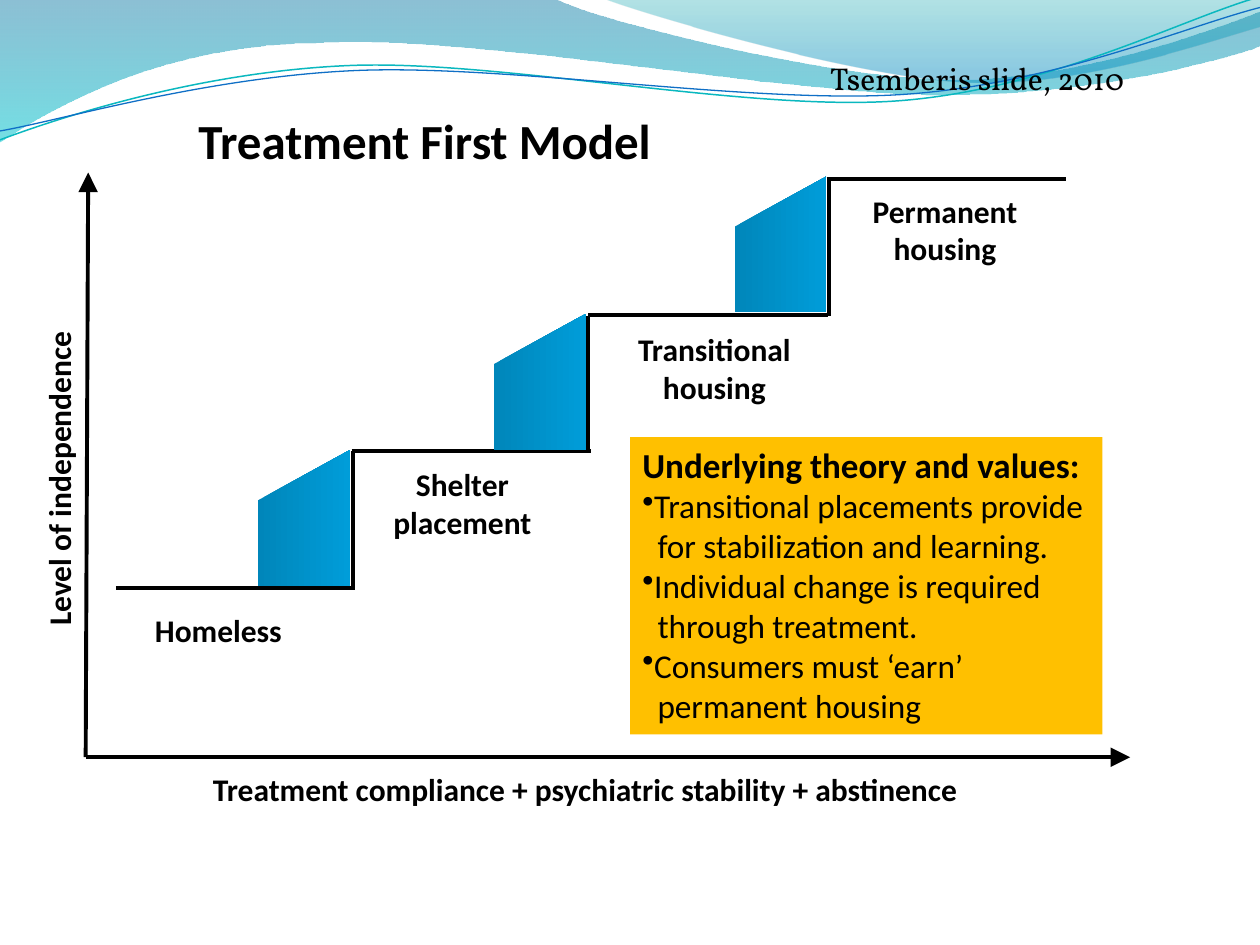
import math

import lxml.etree
import pptx
import pptx.dml.color
import pptx.enum.shapes
import pptx.enum.text
import pptx.oxml.ns
import pptx.util

Inches, Pt = pptx.util.Inches, pptx.util.Pt
RGBColor = pptx.dml.color.RGBColor
ALIGN = pptx.enum.text.PP_ALIGN
ANCHOR = pptx.enum.text.MSO_ANCHOR
GROW = pptx.enum.text.MSO_AUTO_SIZE.SHAPE_TO_FIT_TEXT
qn = pptx.oxml.ns.qn

BLACK = RGBColor(0x00, 0x00, 0x00)
AMBER = RGBColor(0xFF, 0xC0, 0x00)
STEP_DARK = RGBColor(0x00, 0x86, 0xBA)
STEP_LIGHT = RGBColor(0x00, 0x9D, 0xD9)
WAVE_BLUE = RGBColor(0x00, 0x74, 0xA1)
WAVE_CYAN = RGBColor(0x00, 0xC6, 0xCF)
CREST_TEAL = RGBColor(0x00, 0xA1, 0xA9)
CREST_BLUE = RGBColor(0x00, 0x8B, 0xBF)
TEAL_LINE = RGBColor(0x0A, 0xB8, 0xBF)
BLUE_LINE = RGBColor(0x0F, 0x6F, 0xC6)
FONT = "Calibri"

# Content
TITLE = "Treatment First Model"
CREDIT = "Tsemberis slide, 2010"
INDEPENDENCE_AXIS = "Level of independence"
COMPLIANCE_AXIS = "Treatment compliance + psychiatric stability + abstinence"
STEP_LABELS = [  # text, left, top, width, height, alignment
    ("Homeless", 1.23, 4.85, 1.27, 0.3, ALIGN.LEFT),
    ("Shelter placement", 2.83, 3.69, 1.68, 0.61, ALIGN.CENTER),
    ("Transitional housing", 4.83, 2.62, 1.68, 0.61, ALIGN.CENTER),
    ("Permanent housing", 6.66, 1.52, 1.68, 0.61, ALIGN.CENTER),
]
THEORY_HEADING = "Underlying theory and values:"
THEORY_POINTS = [  # bulleted line, continuation line
    ("Transitional placements provide", "for stabilization and learning."),
    ("Individual change is required", "through treatment."),
    ("Consumers must ‘earn’", "permanent housing"),
]

# Staircase corners
TREADS = [(0.92, 4.67), (2.79, 3.58), (4.67, 2.5), (6.56, 1.42)]  # left, top
RISERS = [(2.8, 3.58), (4.67, 2.51), (6.58, 1.43)]  # x, top
PANELS = [(2.05, 3.57), (3.92, 2.49), (5.83, 1.4)]  # left, top
TREAD, RISE = 1.9, 1.08
PANEL_WIDTH, PANEL_SLOPE = 0.73, 0.4

# Wave outlines: a start point, then lines (2 numbers) or cubic curves (6 numbers)
WAVE_FILLS = [  # outline, gradient stops (position, colour, opacity %)
    ([(0, -0.01), (4.4, -0.01), (4.76, 0.17, 6.64, 0.63, 7.58, 0.63),
      (8.53, 0.63, 9.58, 0.26, 10, 0.09), (10.01, 0.36),
      (9.83, 0.44, 8.7, 0.76, 7.46, 0.75), (6.22, 0.75, 3.82, 0.28, 2.57, 0.34),
      (1.29, 0.35, 0.46, 0.83, -0.01, 1.13), (0, -0.01)],
     [(0, WAVE_BLUE, 45), (1, WAVE_CYAN, 55)]),
    ([(4.79, -0.01), (5.09, 0.11, 6.82, 0.62, 7.69, 0.65),
      (8.56, 0.69, 9.61, 0.32, 10, 0.21), (10, 0), (4.79, -0.01)],
     [(0, CREST_TEAL, 30), (0.8, CREST_BLUE, 45)]),
]
WAVE_TILT = -2.7
WAVE_LINES = [  # outline, centre, colour, width
    ([(0, 1.11), (0.48, 0.93, 1.58, 0.57, 2.77, 0.52),
      (3.95, 0.47, 5.93, 0.89, 7.13, 0.8), (8.33, 0.71, 9.38, 0.15, 9.98, -0.02)],
     (4.99, 0.58), TEAL_LINE, 0.85),
    ([(0, 1.04), (0.47, 0.96, 1.64, 0.61, 2.83, 0.56),
      (4.03, 0.51, 5.97, 0.83, 7.17, 0.75), (8.36, 0.67, 9.41, 0.21, 10, 0.06)],
     (5, 0.59), BLUE_LINE, 0.75),
]


def untilt(outline, center):
    """Turn an outline back to level about its centre."""
    cx, cy = center
    cos, sin = math.cos(math.radians(-WAVE_TILT)), math.sin(math.radians(-WAVE_TILT))
    level = []
    for segment in outline:
        turned = []
        for x, y in zip(segment[::2], segment[1::2]):
            turned += [cx + (x - cx) * cos - (y - cy) * sin,
                       cy + (x - cx) * sin + (y - cy) * cos]
        level.append(tuple(turned))
    return level


def add_outline(slide, outline, close=False):
    points = [(Inches(x), Inches(y)) for segment in outline
              for x, y in zip(segment[::2], segment[1::2])]
    builder = slide.shapes.build_freeform(*points[0], scale=1.0)
    builder.add_line_segments(points[1:], close=close)
    shape = builder.convert_to_shape()
    shape.shadow.inherit = False
    # Join each group of three points into one cubic curve
    steps = iter(list(shape.element.spPr.iter(qn("a:lnTo"))))
    for segment in outline[1:]:
        first = next(steps)
        if len(segment) == 6:
            curve = lxml.etree.Element(qn("a:cubicBezTo"))
            first.addprevious(curve)
            for step in (first, next(steps), next(steps)):
                curve.append(step[0])
                step.getparent().remove(step)
    return shape


def fill_gradient(shape, stops, angle):
    shape.line.fill.background()
    shape.fill.gradient()
    shape.fill.gradient_angle = angle
    for stop, (position, color, _) in zip(shape.fill.gradient_stops, stops):
        stop.position = position
        stop.color.rgb = color
    for clr, (_, _, opacity) in zip(shape.element.spPr.iter(qn("a:srgbClr")), stops):
        if opacity < 100:
            lxml.etree.SubElement(clr, qn("a:alpha")).set("val", str(opacity * 1000))


def add_line(slide, start, end, arrow=False):
    line = slide.shapes.add_connector(
        pptx.enum.shapes.MSO_CONNECTOR.STRAIGHT, *map(Inches, start + end))
    line.line.color.rgb = BLACK
    line.line.width = Pt(2.25)
    properties = line.element.spPr
    if arrow:
        head = lxml.etree.SubElement(properties.find(qn("a:ln")), qn("a:tailEnd"))
        for key, value in (("type", "triangle"), ("w", "lg"), ("len", "lg")):
            head.set(key, value)
    lxml.etree.SubElement(properties, qn("a:effectLst"))


def add_run(paragraph, text, size, bold=False, font=FONT):
    run = paragraph.add_run()
    run.text = text
    run.font.name, run.font.size, run.font.bold = font, Pt(size), bold
    run.font.color.rgb = BLACK


def add_label(slide, text, left, top, width, height, align=ALIGN.LEFT,
              bold=True, font=FONT, inset=0):
    box = slide.shapes.add_textbox(*map(Inches, (left, top, width, height)))
    frame = box.text_frame
    frame.word_wrap = True
    frame.auto_size = GROW
    frame.margin_left = frame.margin_right = Inches(inset)
    frame.margin_top = frame.margin_bottom = Inches(inset / 2)
    frame.paragraphs[0].alignment = align
    add_run(frame.paragraphs[0], text, 18, bold, font)
    return box


def add_theory_box(slide):
    box = slide.shapes.add_shape(pptx.enum.shapes.MSO_SHAPE.RECTANGLE,
                                 *map(Inches, (5, 3.47, 3.75, 2.36)))
    box.shadow.inherit = False
    box.fill.solid()
    box.fill.fore_color.rgb = AMBER
    box.line.fill.background()
    frame = box.text_frame
    frame.word_wrap = True
    frame.auto_size = GROW
    frame.vertical_anchor = ANCHOR.TOP
    frame.paragraphs[0].alignment = ALIGN.LEFT
    add_run(frame.paragraphs[0], THEORY_HEADING, 20, bold=True)
    for point in THEORY_POINTS:
        for bulleted, text in zip((True, False), point):
            paragraph = frame.add_paragraph()
            paragraph.alignment = ALIGN.LEFT
            properties = paragraph._p.get_or_add_pPr()
            properties.set("marL", str(0 if bulleted else Inches(0.12)))
            properties.set("indent", "0")
            if bulleted:
                lxml.etree.SubElement(properties, qn("a:buChar")).set("char", "•")
            add_run(paragraph, text, 19)


def main():
    deck = pptx.Presentation()
    deck.slide_width, deck.slide_height = Inches(10), Inches(7.5)
    slide = deck.slides.add_slide(deck.slide_layouts[5])

    # Waves across the top
    for outline, stops in WAVE_FILLS:
        fill_gradient(add_outline(slide, outline, close=True), stops, 270)
    for outline, center, color, width in WAVE_LINES:
        wave = add_outline(slide, untilt(outline, center))
        wave.rotation = WAVE_TILT
        wave.fill.background()
        wave.line.color.rgb = color
        wave.line.width = Pt(width)

    # Staircase
    for left, top in TREADS:
        add_line(slide, (left, top), (left + TREAD, top))
    for x, top in RISERS:
        add_line(slide, (x, top + RISE), (x, top))
    for label in STEP_LABELS:
        add_label(slide, *label)
    for left, top in PANELS:
        right, base = left + PANEL_WIDTH, top + RISE
        panel = add_outline(slide, [(right, base), (right, top),
                                    (left, top + PANEL_SLOPE), (left, base)])
        fill_gradient(panel, [(0, STEP_DARK, 100), (1, STEP_LIGHT, 100)], 0)

    # Axes
    add_line(slide, (0.68, 6.01), (0.7, 1.37), arrow=True)
    add_line(slide, (0.68, 6.01), (8.97, 6.01), arrow=True)
    add_label(slide, INDEPENDENCE_AXIS, -0.92, 3.43, 2.77, 0.3).rotation = 270
    add_label(slide, COMPLIANCE_AXIS, 1.69, 6.11, 6.84, 0.3)

    add_theory_box(slide)

    # Title and credit
    title = slide.shapes.title
    title.left, title.top, title.width, title.height = map(Inches, (1.33, 0.83, 4.08, 0.57))
    title.text_frame.vertical_anchor = ANCHOR.TOP
    title.text_frame.auto_size = GROW
    title.text_frame.paragraphs[0].alignment = ALIGN.CENTER
    add_run(title.text_frame.paragraphs[0], TITLE, 28, bold=True)
    add_label(slide, CREDIT, 6.49, 0.42, 3.25, 0.4, bold=False, font="Vollkorn", inset=0.1)

    deck.save("out.pptx")


if __name__ == "__main__":
    main()
